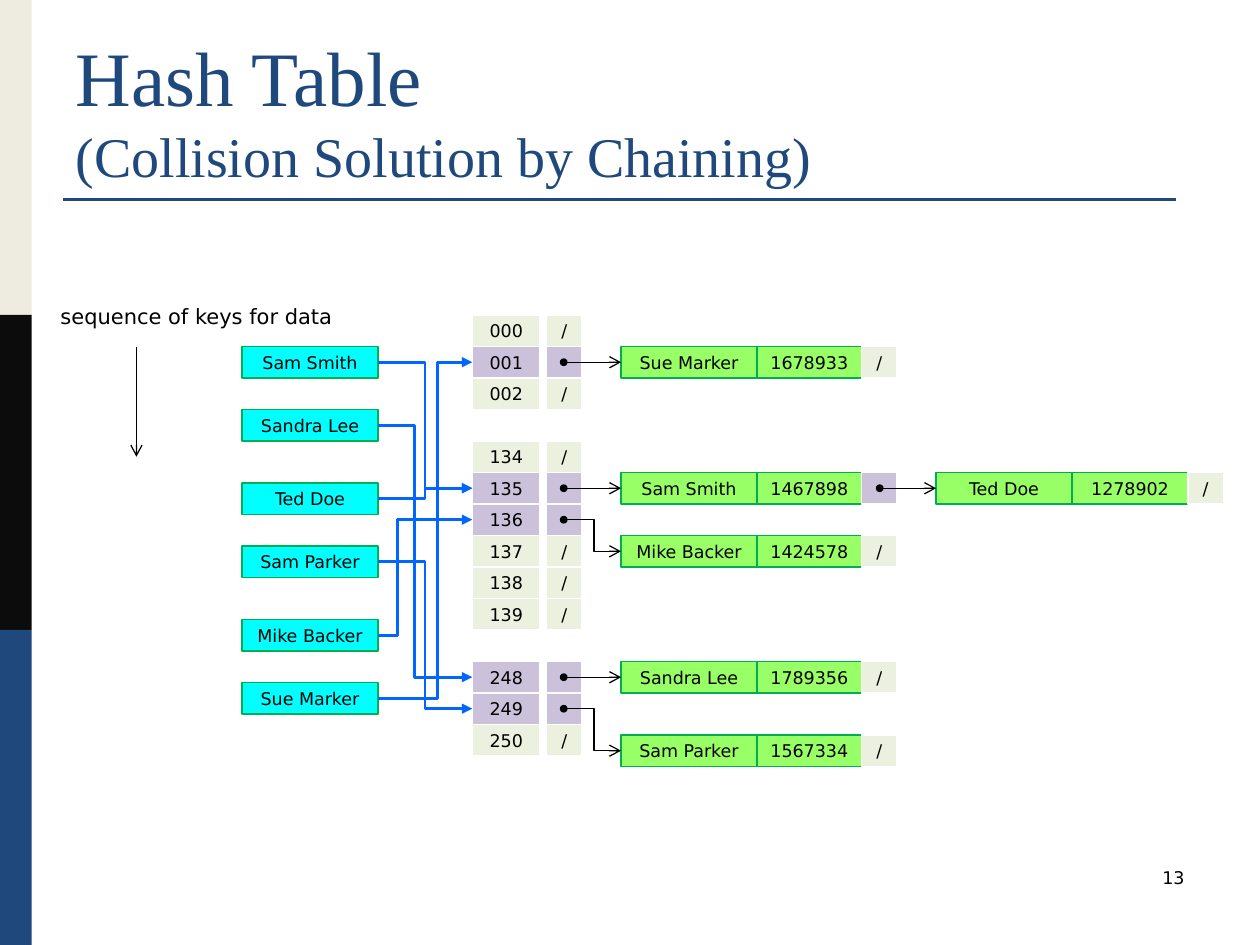
import lxml.etree
import pptx
import pptx.dml.color
import pptx.enum.shapes
import pptx.enum.text
import pptx.oxml.ns
import pptx.util

Cm, Pt = pptx.util.Cm, pptx.util.Pt
RGBColor = pptx.dml.color.RGBColor
SHAPE = pptx.enum.shapes.MSO_SHAPE
CONNECTOR = pptx.enum.shapes.MSO_CONNECTOR
ALIGN = pptx.enum.text.PP_ALIGN
ANCHOR = pptx.enum.text.MSO_ANCHOR
qn = pptx.oxml.ns.qn

BLACK = RGBColor(0x00, 0x00, 0x00)
WHITE = RGBColor(0xFF, 0xFF, 0xFF)
NAVY = RGBColor(0x1F, 0x49, 0x7D)
CREAM = RGBColor(0xEE, 0xEC, 0xE1)
COAL = RGBColor(0x0C, 0x0C, 0x0C)
CYAN = RGBColor(0x00, 0xFF, 0xFF)
GREEN = RGBColor(0x00, 0xB0, 0x50)
LIME = RGBColor(0x99, 0xFF, 0x66)
PALE = RGBColor(0xEB, 0xF1, 0xDE)
LILAC = RGBColor(0xCC, 0xC1, 0xDA)
BLUE = RGBColor(0x00, 0x66, 0xFF)
FONT = "DejaVu Sans"

# The diagram stands on rows a quarter of 2.54 cm high
ROW = Cm(2.54) / 4
KEY_X, KEY_W = 4.88, 2.74
INDEX_X, INDEX_W = 9.52, 1.37
SLOT_X, SLOT_W = 11.02, 0.71
RECORD_X, NEXT_X = 12.52, 18.87
DOT = 0.13

deck = pptx.Presentation()
deck.slide_width, deck.slide_height = Cm(25.4), Cm(19.05)
page = deck.slides.add_slide(deck.slide_layouts[5])


def add_box(left, row, width, fill, line=None, text="", rows=1):
    box = page.shapes.add_shape(SHAPE.RECTANGLE, Cm(left), int(row * ROW),
                                Cm(width), int(rows * ROW))
    box.shadow.inherit = False
    box.fill.solid()
    box.fill.fore_color.rgb = fill
    if line is None:
        box.line.fill.background()
    else:
        box.line.color.rgb = line
        box.line.width = Pt(0.75)
    if text:
        box.text_frame.text = text
        box.text_frame.word_wrap = False
        box.text_frame.vertical_anchor = ANCHOR.MIDDLE
        para = box.text_frame.paragraphs[0]
        para.alignment = ALIGN.CENTER
        para.font.size, para.font.name = Pt(10), FONT
        para.font.color.rgb = BLACK


def add_line(x1, row1, x2, row2, colour, width, head=None, bend=None):
    kind = CONNECTOR.ELBOW if bend else CONNECTOR.STRAIGHT
    line = page.shapes.add_connector(kind, Cm(x1), int(row1 * ROW),
                                     Cm(x2), int(row2 * ROW))
    line.line.color.rgb = colour
    line.line.width = Pt(width)
    properties = line._element.spPr
    if head:
        lxml.etree.SubElement(properties.find(qn("a:ln")), qn("a:tailEnd"), type=head)
    if bend:
        guides = properties.find(qn("a:prstGeom")).get_or_add_avLst()
        lxml.etree.SubElement(guides, qn("a:gd"), name="adj1",
                              fmla=f"val {round(bend * 100000)}")
    lxml.etree.SubElement(properties, qn("a:effectLst"))


# Side bands and title rule
for band, colour in enumerate((CREAM, COAL, NAVY)):
    add_box(0, band * 10, 0.64, colour, rows=10)
add_line(1.27, 6.33, 23.7, 6.33, NAVY, 1.5)

# Title
title = page.shapes.title
title.left, title.top, title.width, title.height = Cm(1.27), Cm(0.76), Cm(22.86), Cm(3.18)
title.text_frame.text = "Hash Table\v(Collision Solution by Chaining)"
title.text_frame.auto_size = pptx.enum.text.MSO_AUTO_SIZE.NONE
title.text_frame.vertical_anchor = ANCHOR.BOTTOM
para = title.text_frame.paragraphs[0]
para.alignment = ALIGN.LEFT
for span, size in zip(para.runs, (44, 32)):
    span.font.size, span.font.name = Pt(size), "Times New Roman"
    span.font.color.rgb = NAVY

# Caption and page number
for text, left, top, width, height, size, align in (
    ("sequence of keys for data", 0.97, 5.99, 6.65, 0.76, 12, ALIGN.LEFT),
    ("13", 18.21, 17.35, 5.92, 1.27, 10, ALIGN.RIGHT),
):
    box = page.shapes.add_textbox(Cm(left), Cm(top), Cm(width), Cm(height))
    box.text_frame.word_wrap = True
    box.text_frame.text = text
    para = box.text_frame.paragraphs[0]
    para.alignment = align
    span = para.runs[0]
    span.font.size, span.font.name = Pt(size), FONT
    span.font.color.rgb = BLACK
add_line(2.75, 11, 2.75, 14.5, BLACK, 0.75, "arrow")

# Index table: first row of each block, its indices
used = {"001", "135", "136", "248", "249"}
blocks = (
    (10, ("000", "001", "002")),
    (14, ("134", "135", "136", "137", "138", "139")),
    (21, ("248", "249", "250")),
)
index_row = {}
for first, indices in blocks:
    for row, index in enumerate(indices, first):
        index_row[index] = row
        fill = LILAC if index in used else PALE
        add_box(INDEX_X, row, INDEX_W, fill, WHITE, index)
        add_box(SLOT_X, row, SLOT_W, fill, WHITE, "" if index in used else "/")

# Keys: name, row, index it hashes to, place of the bend
keys = (
    ("Sam Smith", 11, "135", 0.5),
    ("Sandra Lee", 13, "248", 0.39),
    ("Ted Doe", 15.33, "135", 0.5),
    ("Sam Parker", 17.33, "249", 0.5),
    ("Mike Backer", 19.67, "136", 0.21),
    ("Sue Marker", 21.67, "001", 0.63),
)
for name, row, index, bend in keys:
    add_box(KEY_X, row, KEY_W, CYAN, GREEN, name)
    add_line(KEY_X + KEY_W, row + 0.5, INDEX_X, index_row[index] + 0.5,
             BLUE, 1.5, "triangle", bend)

# Records: name, number, left, row, width of the number, whether it is last
records = (
    ("Sue Marker", "1678933", RECORD_X, 11, 2.11, True),
    ("Sam Smith", "1467898", RECORD_X, 15, 2.11, False),
    ("Ted Doe", "1278902", NEXT_X, 15, 2.34, True),
    ("Mike Backer", "1424578", RECORD_X, 17, 2.11, True),
    ("Sandra Lee", "1789356", RECORD_X, 21, 2.11, True),
    ("Sam Parker", "1567334", RECORD_X, 23.33, 2.11, True),
)
for name, number, left, row, width, last in records:
    add_box(left, row, KEY_W, LIME, GREEN, name)
    add_box(left + KEY_W, row, width, LIME, GREEN, number)
    add_box(left + KEY_W + width, row, SLOT_W, PALE if last else LILAC, WHITE,
            "/" if last else "")

# Pointers: left of the dot, row it leaves, record it reaches
pointers = (
    (11.3, 11, RECORD_X, 11),
    (11.3, 15, RECORD_X, 15),
    (11.3, 16, RECORD_X, 17),
    (11.3, 21, RECORD_X, 21),
    (11.3, 22, RECORD_X, 23.33),
    (17.67, 15, NEXT_X, 15),
)
for left, row, target, target_row in pointers:
    middle = row + 0.5
    dot = page.shapes.add_shape(SHAPE.OVAL, Cm(left), int(middle * ROW - Cm(DOT) / 2),
                                Cm(DOT), Cm(DOT))
    dot.shadow.inherit = False
    dot.fill.solid()
    dot.fill.fore_color.rgb = BLACK
    dot.line.color.rgb = BLACK
    dot.line.width = Pt(0.75)
    add_line(left + DOT, middle, target, target_row + 0.5, BLACK, 0.75, "arrow",
             0.5 if row != target_row else None)

deck.save("out.pptx")
